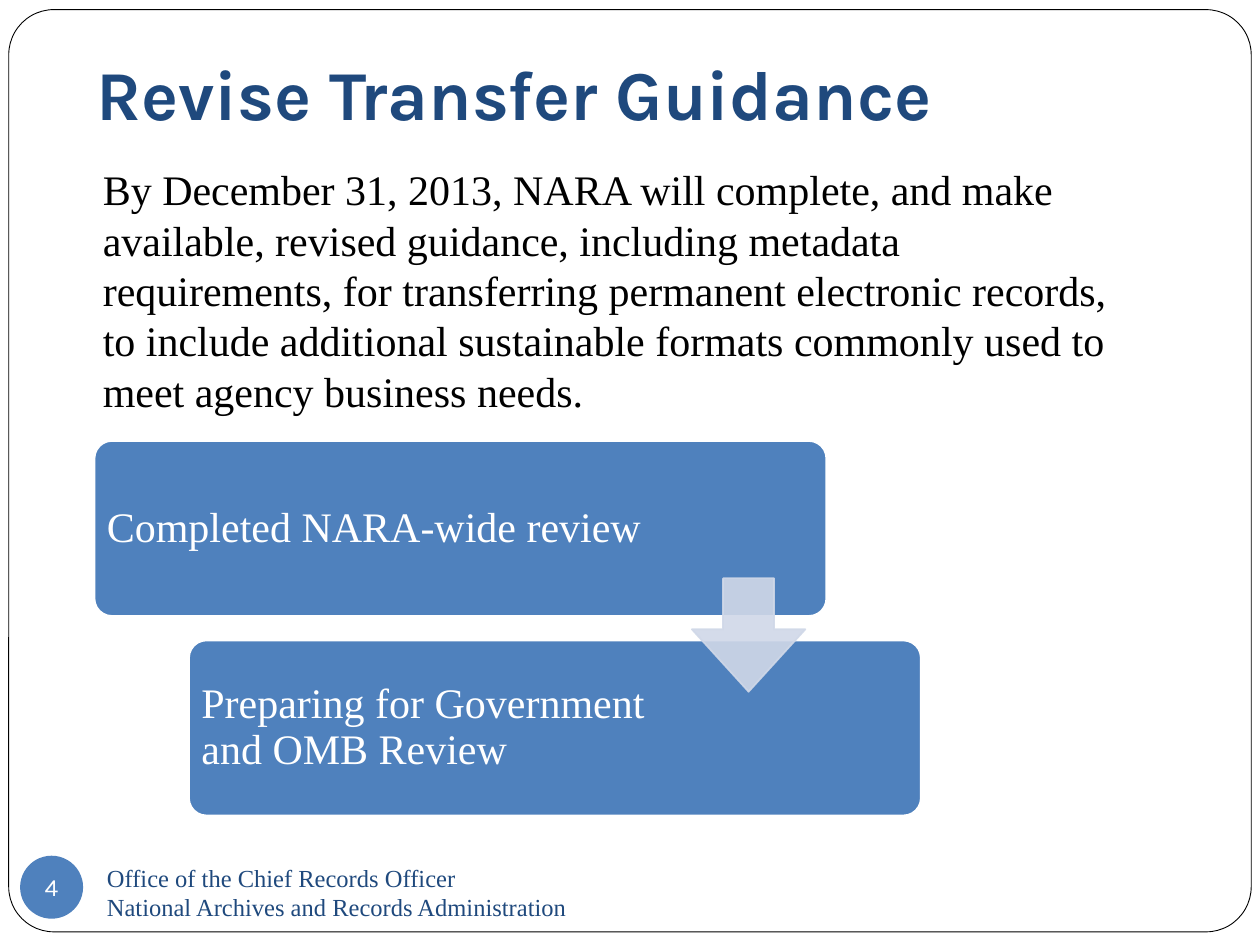
from lxml import etree
from pptx import Presentation
from pptx.dml.color import RGBColor
from pptx.enum.shapes import MSO_SHAPE
from pptx.enum.text import MSO_ANCHOR, PP_ALIGN
from pptx.oxml.ns import qn
from pptx.util import Pt

TOP, MIDDLE, BOTTOM = MSO_ANCHOR.TOP, MSO_ANCHOR.MIDDLE, MSO_ANCHOR.BOTTOM
CENTER = PP_ALIGN.CENTER
ROUNDED, OVAL, DOWN_ARROW = MSO_SHAPE.ROUNDED_RECTANGLE, MSO_SHAPE.OVAL, MSO_SHAPE.DOWN_ARROW

THEME = {
    "navy": "1F497D", "blue": "4F81BD", "pale": "D0D8E8",
    "white": "FFFFFF", "black": "000000",
    "heading_font": "Karla", "text_font": "Times New Roman",
    "title_size": 40, "body_size": 24, "small_size": 14,
}

TITLE = "Revise Transfer Guidance"
BODY = ("By December 31, 2013, NARA will complete, and make available, revised "
        "guidance, including metadata requirements, for transferring permanent "
        "electronic records, to include additional sustainable formats commonly "
        "used to meet agency business needs.")
# Step wording and the width its text may take
STEPS = [("Completed NARA-wide review", 321),
         ("Preparing for Government and OMB Review", 279)]
FOOTER = ["Office of the Chief Records Officer",
          "National Archives and Records Administration"]
PAGE_NUMBER = "4"

STEP_LEFT, STEP_TOP, STEP_WIDTH, STEP_HEIGHT = 54, 252, 418.2, 100
STEP_SHIFT, STEP_PITCH = 54, 114
ARROW_SIZE = 64.8


def color(name):
    return RGBColor.from_string(THEME[name])


def add_box(shapes, kind, place, fill, line=None, line_width=1, adjustments=()):
    box = shapes.add_shape(kind, *map(Pt, place))
    box.shadow.inherit = False
    box.fill.solid()
    box.fill.fore_color.rgb = color(fill)
    if line:
        box.line.color.rgb = color(line)
        box.line.width = Pt(line_width)
    else:
        box.line.fill.background()
    for index, value in enumerate(adjustments):
        box.adjustments[index] = value
    return box


def write(frame, lines, size, ink, font="text_font", bold=False, anchor=MIDDLE,
          margins=(7.2, 3.6, 7.2, 3.6), wrap=True, **paragraph_format):
    """Fill a text frame; margins run left, top, right, bottom."""
    frame.word_wrap = wrap
    frame.vertical_anchor = anchor
    for side, margin in zip(("left", "top", "right", "bottom"), margins):
        setattr(frame, f"margin_{side}", Pt(margin))
    for index, line in enumerate(lines):
        paragraph = frame.paragraphs[0] if index == 0 else frame.add_paragraph()
        for name, value in paragraph_format.items():
            setattr(paragraph, name, value)
        run = paragraph.add_run()
        run.text = line
        run.font.name = THEME[font]
        run.font.size = Pt(THEME[size])
        run.font.bold = bold
        run.font.color.rgb = color(ink)


def add_text(shapes, place, lines, size, ink, **text_format):
    write(shapes.add_textbox(*map(Pt, place)).text_frame, lines, size, ink, **text_format)


def set_opacity(shape, percent):
    """Apply one opacity to both the fill and the line."""
    for rgb in shape.element.spPr.iter(qn("a:srgbClr")):
        etree.SubElement(rgb, qn("a:alpha"), val=str(percent * 1000))


def add_steps(shapes):
    for index, (wording, text_width) in enumerate(STEPS):
        left = STEP_LEFT + index * STEP_SHIFT
        top = STEP_TOP + index * STEP_PITCH
        add_box(shapes, ROUNDED, (left, top, STEP_WIDTH, STEP_HEIGHT),
                "blue", "white", adjustments=[0.1])
        add_text(shapes, (left, top, text_width, STEP_HEIGHT), [wording],
                 "body_size", "white", margins=[7.2] * 4,
                 line_spacing=0.9, space_after=Pt(8.4))
    for index in range(len(STEPS) - 1):
        right = STEP_LEFT + index * STEP_SHIFT + STEP_WIDTH
        top = STEP_TOP + index * STEP_PITCH + 78.5
        arrow = add_box(shapes, DOWN_ARROW,
                        (right - ARROW_SIZE - 12, top, ARROW_SIZE, ARROW_SIZE),
                        "pale", "pale", adjustments=[0.45, 0.55])
        set_opacity(arrow, 90)


def main():
    deck = Presentation()
    deck.slide_width, deck.slide_height = Pt(720), Pt(540)
    shapes = deck.slides.add_slide(deck.slide_layouts[6]).shapes

    add_box(shapes, ROUNDED, (5, 5.5, 710, 527), "white", "black", 0.5, [0.049])
    add_text(shapes, (48, -6, 612, 90), [TITLE], "title_size", "navy",
             font="heading_font", bold=True, anchor=BOTTOM,
             margins=(7.2, 3.6, 7.2, 7.2))
    badge = add_box(shapes, OVAL, (11.5, 489, 36, 36), "blue")
    write(badge.text_frame, [PAGE_NUMBER], "small_size", "white",
          font="heading_font", margins=[0] * 4, wrap=False, alignment=CENTER)
    add_text(shapes, (30, 90, 612, 360), [BODY], "body_size", "black", anchor=TOP,
             margins=(28.8, 3.6, 7.2, 3.6), space_before=Pt(5.8))
    add_steps(shapes)
    add_text(shapes, (54, 492, 312, 36), FOOTER, "small_size", "navy")

    deck.save("out.pptx")


if __name__ == "__main__":
    main()
